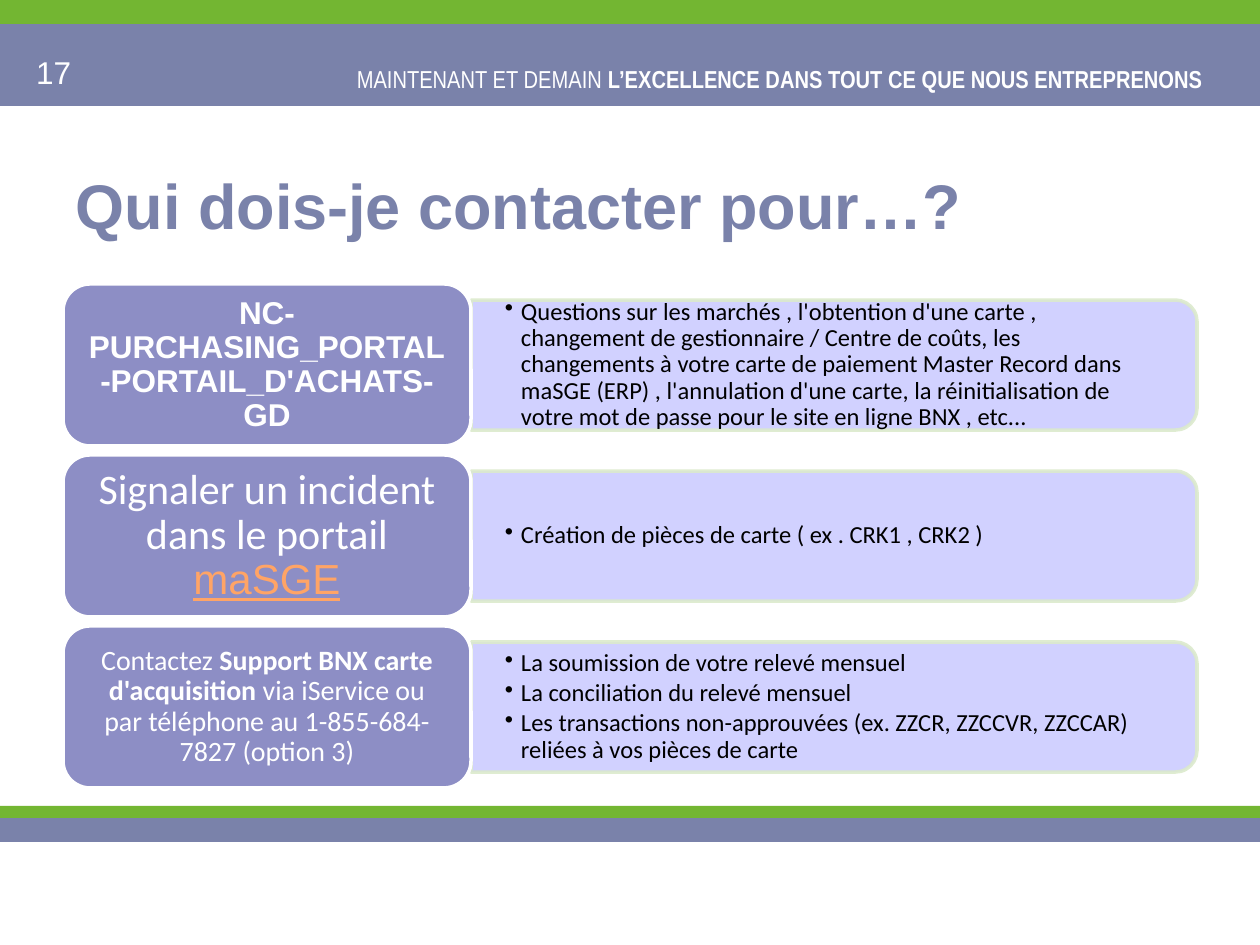
import pptx
import pptx.util
import pptx.dml.color
import pptx.enum.shapes
import pptx.enum.text
import pptx.oxml.ns
import lxml.etree

SHAPE = pptx.enum.shapes.MSO_SHAPE
ALIGN = pptx.enum.text.PP_ALIGN
ANCHOR = pptx.enum.text.MSO_ANCHOR
PX = 914400 / 126

COLORS = {
    "slate": "7A82AA", "green": "73B632", "card": "8D8EC5", "panel": "CDCDFF",
    "edge": "DCEACC", "white": "FFFFFF", "black": "000000", "link": "FFA466",
}

# Content
TITLE = "Qui dois-je contacter pour…?"
PAGE_NUMBER = "17"
MOTTO = [("MAINTENANT ET DEMAIN ", {}),
         ("L’EXCELLENCE DANS TOUT CE QUE NOUS ENTREPRENONS", {"bold": True})]
CONTACTS = [
    {"who": [("NC-PURCHASING_PORTAL-PORTAIL_D'ACHATS-GD", {"bold": True})],
     "format": {"name": "Arial", "size": 18}, "inset": 17,
     "topics": ["Questions sur les marchés , l'obtention d'une carte , changement de "
                "gestionnaire / Centre de coûts, les changements à votre carte de paiement "
                "Master Record dans maSGE (ERP) , l'annulation d'une carte, la "
                "réinitialisation de votre mot de passe pour le site en ligne BNX , etc..."]},
    {"who": [("Signaler un incident dans le portail ", {}),
             ("maSGE", {"name": "Arial", "color": "link", "underline": True})],
     "format": {"name": "Calibri", "size": 24}, "inset": 20,
     "topics": ["Création de pièces de carte ( ex . CRK1 , CRK2 )"]},
    {"who": [("Contactez ", {}), ("Support BNX carte d'acquisition ", {"bold": True}),
             ("via iService ou par téléphone au 1-855-684-7827 (option 3)", {})],
     "format": {"name": "Calibri", "size": 16}, "inset": 17,
     "topics": ["La soumission de votre relevé mensuel",
                "La conciliation du relevé mensuel",
                "Les transactions non-approuvées (ex. ZZCR, ZZCCVR, ZZCCAR) "
                "reliées à vos pièces de carte"]},
]

# Layout in px: top and height of each full-width band, then the contact rows
BANDS = [(24, 82, "slate"), (0, 24, "green"), (818, 24, "slate"), (806, 12, "green")]
SLIDE_W, SLIDE_H = 1260, 945
ROW_TOP, ROW_PITCH = 284, 171
CARD_LEFT, CARD_W, CARD_H = 63, 408, 162
PANEL_W, PANEL_H = 726, 130
TOPICS_W, TOPICS_H = 719, 118


def emu(px):
    return round(px * PX)


def box(*px):
    return [emu(value) for value in px]


def rgb(name):
    return pptx.dml.color.RGBColor.from_string(COLORS[name])


def set_attributes(target, values):
    for key, value in values.items():
        setattr(target, key, value)


def add_runs(paragraph, runs, base):
    for text, changes in runs:
        run = paragraph.add_run()
        run.text = text
        values = {**base, **changes}
        run.font.color.rgb = rgb(values.pop("color"))
        values["size"] = pptx.util.Pt(values["size"])
        set_attributes(run.font, values)


def set_frame(frame, inset_x=13, inset_y=6, anchor=ANCHOR.TOP):
    set_attributes(frame, {
        "word_wrap": True, "vertical_anchor": anchor,
        "margin_left": emu(inset_x), "margin_right": emu(inset_x),
        "margin_top": emu(inset_y), "margin_bottom": emu(inset_y)})


def add_block(slide, kind, place, fill, edge=None):
    block = slide.shapes.add_shape(kind, *box(*place))
    block.shadow.inherit = False
    block.fill.solid()
    block.fill.fore_color.rgb = rgb(fill)
    if edge:
        block.line.color.rgb = rgb(edge)
        block.line.width = pptx.util.Pt(2)
    else:
        block.line.fill.background()
    return block


def add_label(slide, place, runs, base, align):
    label = slide.shapes.add_textbox(*box(*place))
    set_frame(label.text_frame)
    paragraph = label.text_frame.paragraphs[0]
    paragraph.alignment = align
    add_runs(paragraph, runs, base)


def make_translucent(block, percent):
    for color in block._element.spPr.iter(pptx.oxml.ns.qn("a:srgbClr")):
        alpha = lxml.etree.SubElement(color, pptx.oxml.ns.qn("a:alpha"))
        alpha.set("val", str(percent * 1000))


def add_bullet(paragraph, indent):
    properties = paragraph._p.get_or_add_pPr()
    properties.set("marL", str(emu(indent)))
    properties.set("indent", str(-emu(indent)))
    bullet = lxml.etree.SubElement(properties, pptx.oxml.ns.qn("a:buChar"))
    bullet.set("char", "•")


def add_contact(slide, contact, top):
    middle = top + CARD_H / 2
    right = CARD_LEFT + CARD_W

    # Panel: rounded on its right side, so an upright shape turned by 90 degrees
    panel = add_block(slide, SHAPE.ROUND_2_SAME_RECTANGLE,
                      (right + (PANEL_W - PANEL_H) / 2, middle - PANEL_W / 2,
                       PANEL_H, PANEL_W), "panel", "edge")
    panel.rotation = 90
    make_translucent(panel, 90)

    # Topics
    topics = slide.shapes.add_textbox(
        *box(right, middle - TOPICS_H / 2, TOPICS_W, TOPICS_H)).text_frame
    set_frame(topics, 34, 18, ANCHOR.MIDDLE)
    for index, topic in enumerate(contact["topics"]):
        paragraph = topics.add_paragraph() if index else topics.paragraphs[0]
        add_bullet(paragraph, 16)
        set_attributes(paragraph, {"line_spacing": 0.9, "space_after": pptx.util.Pt(2)})
        add_runs(paragraph, [(topic, {})], {"name": "Calibri", "size": 14, "color": "black"})

    # Card
    card = add_block(slide, SHAPE.ROUNDED_RECTANGLE,
                     (CARD_LEFT, top, CARD_W, CARD_H), "card", "white")
    set_frame(card.text_frame, contact["inset"], 12, ANCHOR.MIDDLE)
    paragraph = card.text_frame.paragraphs[0]
    set_attributes(paragraph, {"alignment": ALIGN.CENTER, "line_spacing": 0.9})
    add_runs(paragraph, contact["who"], {**contact["format"], "color": "white"})


def main():
    deck = pptx.Presentation()
    deck.slide_width, deck.slide_height = box(SLIDE_W, SLIDE_H)
    slide = deck.slides.add_slide(deck.slide_layouts[5])

    # Header and footer
    for top, height, color in BANDS:
        add_block(slide, SHAPE.RECTANGLE, (0, top, SLIDE_W, height), color)
    add_label(slide, (304, 58, 912, 43), MOTTO,
              {"name": "Arial Narrow", "size": 14, "color": "white"}, ALIGN.RIGHT)
    add_label(slide, (23, 47, 294, 50), [(PAGE_NUMBER, {})],
              {"name": "Arial", "size": 18, "color": "white"}, ALIGN.LEFT)

    # Title
    title = slide.shapes.title
    set_attributes(title, dict(zip(("left", "top", "width", "height"),
                                   box(63, 125, 1134, 158))))
    set_frame(title.text_frame, anchor=ANCHOR.MIDDLE)
    heading = title.text_frame.paragraphs[0]
    heading.alignment = ALIGN.LEFT
    add_runs(heading, [(TITLE, {})],
             {"name": "Arial", "size": 36, "bold": True, "color": "slate"})

    # Contacts
    for row, contact in enumerate(CONTACTS):
        add_contact(slide, contact, ROW_TOP + row * ROW_PITCH)

    deck.save("out.pptx")


if __name__ == "__main__":
    main()
